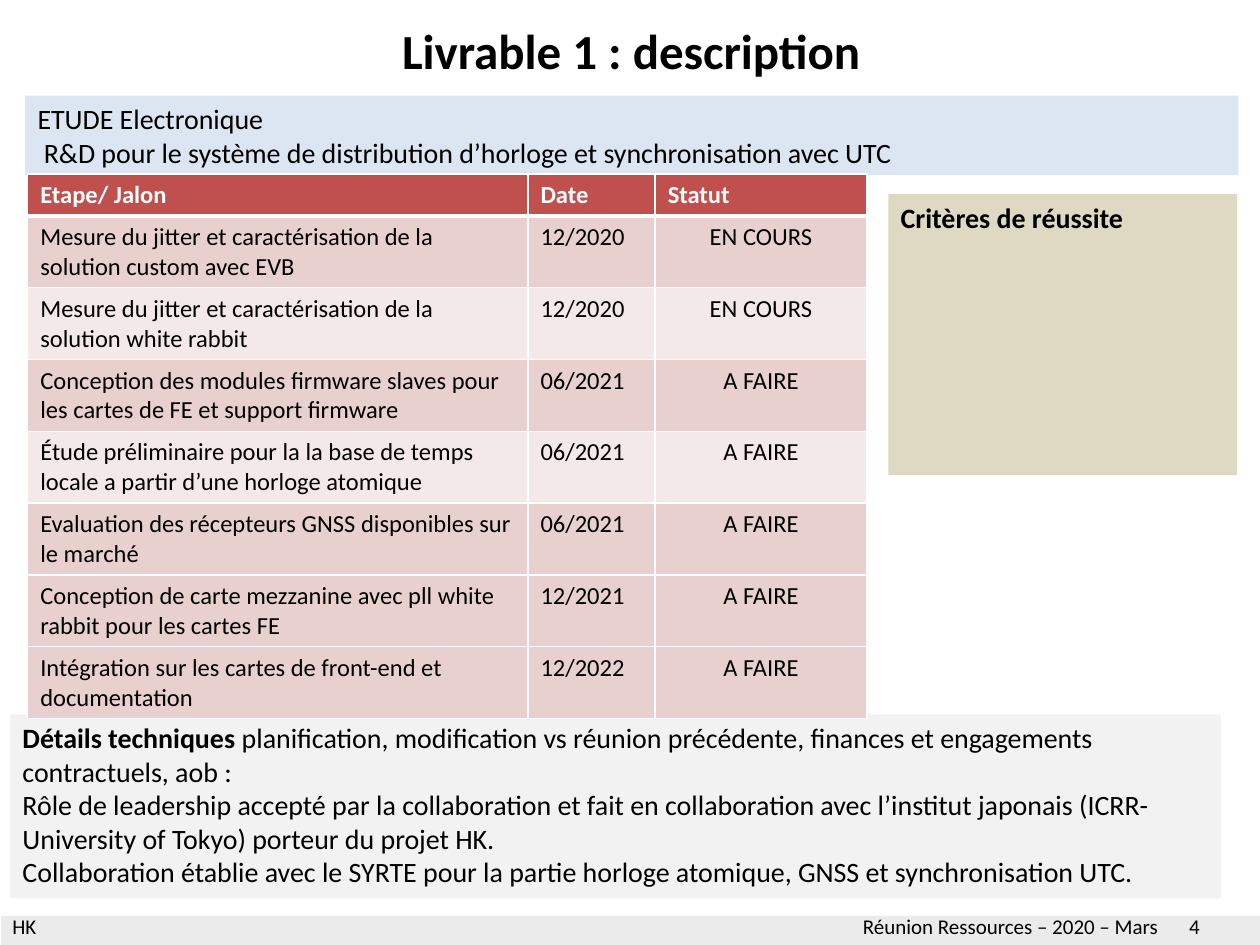
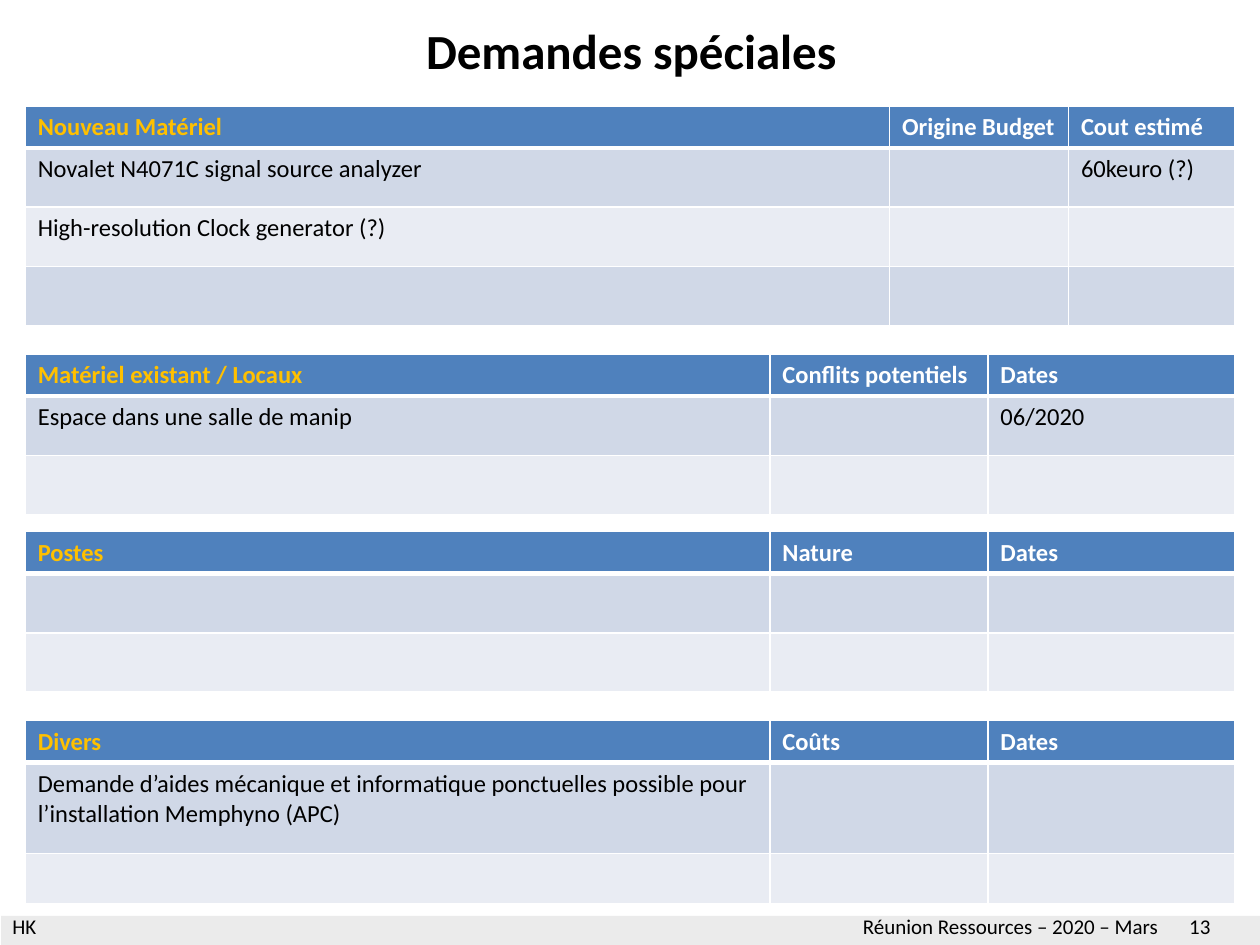
from pptx import Presentation
from pptx.dml.color import RGBColor
from pptx.enum.shapes import MSO_SHAPE
from pptx.enum.text import MSO_ANCHOR, MSO_AUTO_SIZE, PP_ALIGN
from pptx.oxml.ns import qn
from pptx.util import Inches, Pt
from lxml.etree import SubElement

BLACK, WHITE, GOLD = "000000", "FFFFFF", "FFC000"
RED = ("C0504D", "E8D0CF", "F4E9E9")    # head, odd rows, even rows
BLUE = ("4F81BD", "D0D8E7", "E9ECF3")
HEAD = 0.33


def color(code):
    return RGBColor.from_string(code)


class Deck:
    font = "Calibri"

    def __init__(self):
        self.prs = Presentation()
        self.prs.slide_width, self.prs.slide_height = Inches(10), Inches(7.5)

    def put_text(self, frame, paras, size, code=BLACK, align=PP_ALIGN.LEFT,
                 anchor=MSO_ANCHOR.TOP):
        """Each paragraph is a list of (text, bold) runs."""
        frame.word_wrap = True
        frame.vertical_anchor = anchor
        for i, runs in enumerate(paras):
            para = frame.add_paragraph() if i else frame.paragraphs[0]
            para.alignment = align
            for text, bold in runs:
                run = para.add_run()
                run.text = text
                font = run.font
                font.name, font.size, font.bold = self.font, Pt(size), bold
                font.color.rgb = color(code)

    def slide(self, title, page):
        self.cur = self.prs.slides.add_slide(self.prs.slide_layouts[5])
        head = self.cur.shapes.title
        head.left, head.top = Inches(0.51), Inches(0.05)
        head.width, head.height = Inches(9), Inches(0.69)
        head.text_frame.auto_size = MSO_AUTO_SIZE.NONE
        self.put_text(head.text_frame, [[(title, True)]], 28,
                      align=PP_ALIGN.CENTER, anchor=MSO_ANCHOR.MIDDLE)
        self.footer(page)

    def footer(self, page):
        self.box(0.01, 7.27, 9.99, 0.23, "D9D9D9", alpha=50)
        self.label(0, 1.23, "HK")
        self.label(6.75, 2.95, "Réunion Ressources – 2020 – Mars")
        self.label(9.34, 0.6, str(page))

    def label(self, left, width, text):
        box = self.cur.shapes.add_textbox(
            Inches(left), Inches(7.2), Inches(width), Inches(0.3))
        self.put_text(box.text_frame, [[(text, False)]], 12)

    def box(self, left, top, width, height, fill, paras=(), alpha=None):
        box = self.cur.shapes.add_shape(
            MSO_SHAPE.RECTANGLE, Inches(left), Inches(top),
            Inches(width), Inches(height))
        box.shadow.inherit = False
        box.line.fill.background()
        box.fill.solid()
        box.fill.fore_color.rgb = color(fill)
        if alpha:
            tone = box._element.spPr.find(".//" + qn("a:srgbClr"))
            SubElement(tone, qn("a:alpha"), val=str(alpha * 1000))
        self.put_text(box.text_frame, paras, 16)

    def edge(self, cell, side, width):
        line = SubElement(cell._tc.get_or_add_tcPr(), qn("a:ln" + side),
                          w=str(Pt(width)))
        fill = SubElement(line, qn("a:solidFill"))
        SubElement(fill, qn("a:srgbClr"), val=WHITE)

    def table(self, left, top, cols, highs, rows, fills, first=WHITE,
              last=PP_ALIGN.LEFT):
        """The first head cell has its own colour, the last column its align."""
        grid = self.cur.shapes.add_table(
            len(rows), len(cols), Inches(left), Inches(top),
            Inches(sum(cols)), Inches(sum(highs))).table
        for col, width in zip(grid.columns, cols):
            col.width = Inches(width)
        for r, (texts, high) in enumerate(zip(rows, highs)):
            grid.rows[r].height = Inches(high)
            for c, text in enumerate(texts):
                cell = grid.cell(r, c)
                for side in "LRTB":
                    thick = (r, side) in ((0, "B"), (1, "T"))
                    self.edge(cell, side, 3 if thick else 1)
                cell.fill.solid()
                cell.fill.fore_color.rgb = color(fills[r])
                code = BLACK if r else WHITE if c else first
                align = last if r and c == len(cols) - 1 else PP_ALIGN.LEFT
                runs = [(text, r == 0)] if text else []
                self.put_text(cell.text_frame, [runs], 14, code, align)


def main():
    deck = Deck()

    # Deliverable: heading band, details, criteria, milestones
    deck.slide("Livrable 1 : description", 4)
    deck.box(0.2, 0.76, 9.63, 0.63, "DCE6F2", [
        [("ETUDE Electronique", False)],
        [(" R&D pour le système de distribution d’horloge et "
          "synchronisation avec UTC", False)]])
    deck.box(0.08, 5.67, 9.61, 1.46, "F2F2F2", [
        [("Détails techniques ", True),
         ("planification, modification vs réunion précédente, finances et "
          "engagements contractuels, aob :", False)],
        [("Rôle de leadership accepté par la collaboration et fait en "
          "collaboration avec l’institut japonais (ICRR-University of Tokyo) "
          "porteur du projet HK.", False)],
        [("Collaboration établie avec le SYRTE pour la partie horloge "
          "atomique, GNSS et synchronisation UTC.", False)]])
    deck.box(7.05, 1.54, 2.77, 2.23, "DDD9C3",
             [[("Critères de réussite", True)]])
    now, todo = "EN COURS", "A FAIRE"
    steps = [
        ("Etape/ Jalon", "Date", "Statut"),
        ("Mesure du jitter et caractérisation de la solution custom avec EVB",
         "12/2020", now),
        ("Mesure du jitter et caractérisation de la solution white rabbit",
         "12/2020", now),
        ("Conception des modules firmware slaves pour les cartes de FE et "
         "support firmware", "06/2021", todo),
        ("Étude préliminaire pour la la base de temps locale a partir d’une "
         "horloge atomique", "06/2021", todo),
        ("Evaluation des récepteurs GNSS disponibles sur le marché",
         "06/2021", todo),
        ("Conception de carte mezzanine avec pll white rabbit pour les "
         "cartes FE", "12/2021", todo),
        ("Intégration sur les cartes de front-end et documentation",
         "12/2022", todo)]
    head, odd, even = RED
    deck.table(0.22, 1.38, (3.97, 1.01, 1.68), [HEAD] + [0.57] * 7, steps,
               [head, odd, even, odd, even, odd, odd, odd],
               last=PP_ALIGN.CENTER)

    # Special requests: four tables of one width
    deck.slide("Demandes spéciales", 13)
    wide, even_cols = (6.86, 1.42, 1.32), (5.91, 1.73, 1.96)
    none = ("", "", "")
    head, odd, even = BLUE
    asks = [
        (0.84, wide, [0.47] * 3, [
            ("Nouveau Matériel", "Origine Budget", "Cout estimé"),
            ("Novalet N4071C signal source analyzer", "", "60keuro (?)"),
            ("High-resolution Clock generator (?)", "", ""), none]),
        (2.81, even_cols, [0.47] * 2, [
            ("Matériel existant / Locaux", "Conflits potentiels", "Dates"),
            ("Espace dans une salle de manip", "", "06/2020"), none]),
        (4.22, even_cols, [0.47] * 2, [
            ("Postes", "Nature", "Dates"), none, none]),
        (5.72, even_cols, [0.72, 0.4], [
            ("Divers", "Coûts", "Dates"),
            ("Demande d’aides mécanique et informatique ponctuelles possible "
             "pour l’installation Memphyno (APC)", "", ""), none])]
    for top, cols, highs, rows in asks:
        deck.table(0.2, top, cols, [HEAD] + highs, rows,
                   [head, odd, even, odd], first=GOLD)

    deck.prs.save("out.pptx")


if __name__ == "__main__":
    main()
